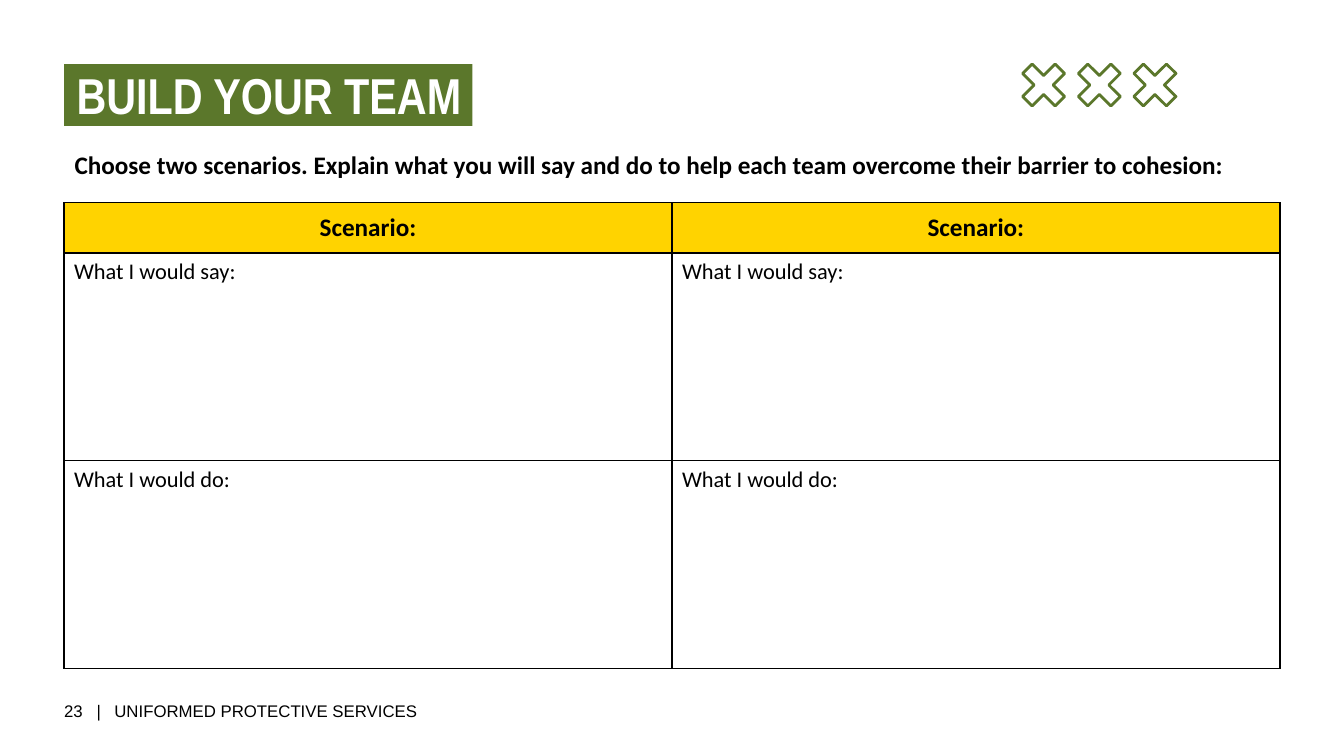
from lxml.etree import SubElement
from pptx import Presentation
from pptx.dml.color import RGBColor
from pptx.enum.shapes import MSO_SHAPE as Preset
from pptx.enum.text import MSO_ANCHOR as Anchor, MSO_AUTO_SIZE as AutoSize, PP_ALIGN as Align
from pptx.oxml.ns import qn
from pptx.util import Pt

PX = 9525
COLORS = {"green": "5B772B", "yellow": "FFD300", "white": "FFFFFF", "black": "000000"}
LEFT = 61


def px(*lengths):
    return [length * PX for length in lengths]


def rgb(name):
    return RGBColor.from_string(COLORS[name])


def add_run(paragraph, text, size, font="Calibri", color="black", bold=False):
    run = paragraph.add_run()
    run.text = text
    run.font.name = font
    run.font.size = Pt(size)
    run.font.bold = bold
    run.font.color.rgb = rgb(color)


def set_frame(shape, insets, anchor=Anchor.TOP, wrap=True):
    frame = shape.text_frame
    frame.margin_left, frame.margin_top, frame.margin_right, frame.margin_bottom = px(*insets)
    frame.vertical_anchor = anchor
    frame.word_wrap = wrap
    frame.auto_size = AutoSize.SHAPE_TO_FIT_TEXT
    return frame.paragraphs[0]


def add_title(slide, text):
    shape = slide.shapes.add_shape(Preset.RECTANGLE, *px(LEFT, 61, 389, 59))
    shape.shadow.inherit = False
    shape.fill.solid()
    shape.fill.fore_color.rgb = rgb("green")
    shape.line.fill.background()
    paragraph = set_frame(shape, (12, 0, 8, 0), wrap=False)
    paragraph.alignment = Align.LEFT
    add_run(paragraph, text, 36, "Arial Narrow", "white", True)


def add_crosses(slide, center_x, center_y, step, count):
    outline = [(11, 20), (20, 11), (9, 0), (20, -11), (11, -20), (0, -9),
               (-11, -20), (-20, -11), (-9, 0), (-20, 11), (-11, 20), (0, 9)]
    builder = None
    for index in range(count):
        points = [(center_x + index * step + x, center_y + y) for x, y in outline]
        if builder is None:
            builder = slide.shapes.build_freeform(*points[0], scale=PX)
        else:
            builder.move_to(*points[0])
        builder.add_line_segments(points[1:], close=True)
    crosses = builder.convert_to_shape()
    crosses.shadow.inherit = False
    crosses.fill.background()
    crosses.line.color.rgb = rgb("green")
    crosses.line.width = Pt(2)


def add_instruction(slide, text):
    box = slide.shapes.add_textbox(*px(LEFT, 132, 1117, 48))
    paragraph = set_frame(box, (10, 10, 10, 10))
    paragraph.space_after = Pt(10)
    add_run(paragraph, text, 18, bold=True)


def add_footer(slide, parts, stops):
    box = slide.shapes.add_textbox(*px(LEFT, 667, 367, 19))
    paragraph = set_frame(box, (0, 0, 0, 0), Anchor.MIDDLE)
    tabs = SubElement(paragraph._p.get_or_add_pPr(), qn("a:tabLst"))
    for stop in stops:
        SubElement(tabs, qn("a:tab"), pos=str(stop * PX), algn="l")
    add_run(paragraph, "\t".join(parts), 12, "Arial")


def set_borders(cell):
    properties = cell._tc.get_or_add_tcPr()
    for side in ("a:lnL", "a:lnR", "a:lnT", "a:lnB"):
        line = SubElement(properties, qn(side), w=str(Pt(1)))
        fill = SubElement(line, qn("a:solidFill"))
        SubElement(fill, qn("a:srgbClr"), val=COLORS["black"])


def add_scenario_table(slide, labels, columns):
    heights = [48, 198, 198]
    width = 579
    table = slide.shapes.add_table(
        len(labels), columns, *px(LEFT, 193, width * columns, sum(heights))).table
    for column in table.columns:
        column.width = width * PX
    for index, (label, height) in enumerate(zip(labels, heights)):
        header = index == 0
        table.rows[index].height = height * PX
        for cell in table.rows[index].cells:
            set_borders(cell)
            cell.fill.solid()
            cell.fill.fore_color.rgb = rgb("yellow" if header else "white")
            cell.vertical_anchor = Anchor.MIDDLE if header else Anchor.TOP
            paragraph = cell.text_frame.paragraphs[0]
            paragraph.alignment = Align.CENTER if header else Align.LEFT
            add_run(paragraph, label, 18 if header else 16, bold=header)


def main():
    presentation = Presentation()
    presentation.slide_width, presentation.slide_height = px(1280, 720)
    slide = presentation.slides.add_slide(presentation.slide_layouts[6])
    add_footer(slide, ["23", "|", "UNIFORMED PROTECTIVE SERVICES"], [31, 48])
    add_title(slide, "BUILD YOUR TEAM")
    add_crosses(slide, 994, 81, 53, 3)
    add_instruction(slide, "Choose two scenarios. Explain what you will say and do "
                           "to help each team overcome their barrier to cohesion:")
    add_scenario_table(slide, ["Scenario:", "What I would say:", "What I would do:"], 2)
    presentation.save("out.pptx")


if __name__ == "__main__":
    main()
